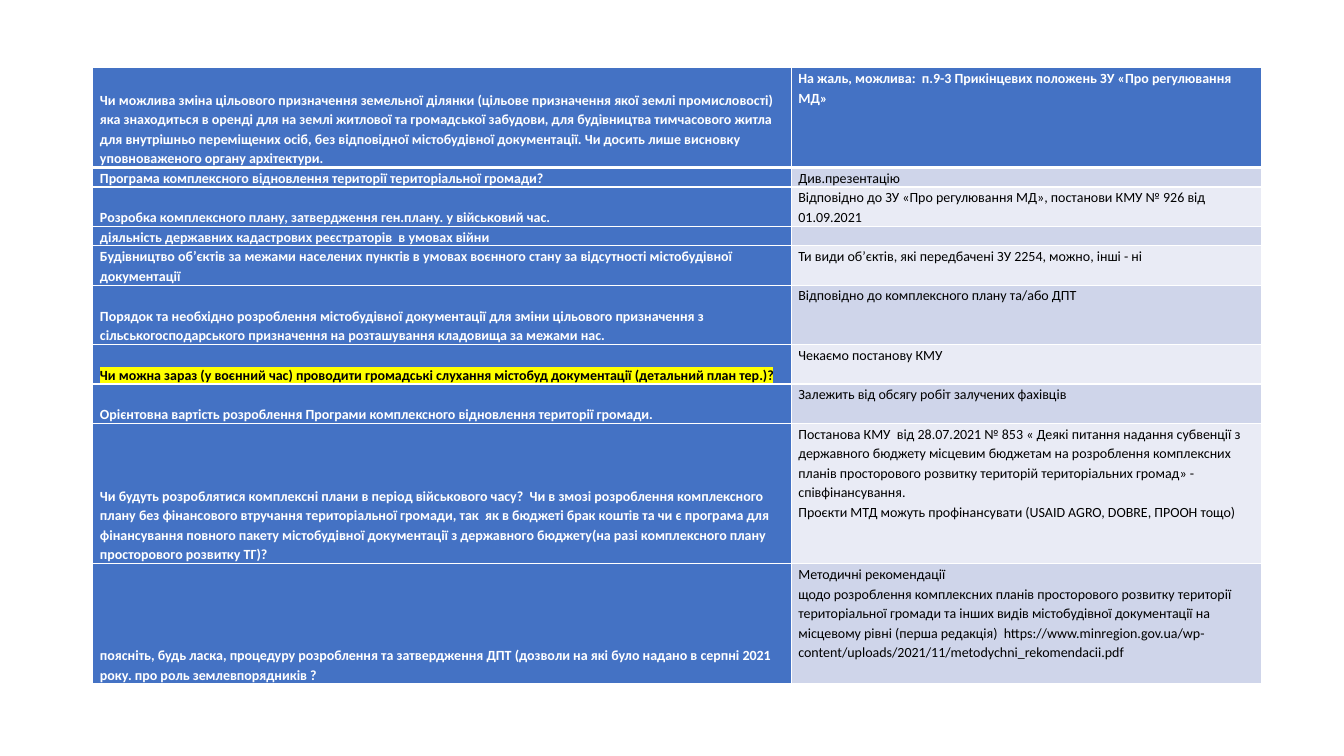
from lxml import etree
from pptx import Presentation
from pptx.dml.color import RGBColor
from pptx.enum.text import MSO_ANCHOR
from pptx.oxml.ns import qn
from pptx.util import Cm, Pt

BOTTOM, TOP = MSO_ANCHOR.BOTTOM, MSO_ANCHOR.TOP
BLUE = RGBColor(0x44, 0x72, 0xC4)
DARK_BAND = RGBColor(0xCF, 0xD5, 0xEA)
LIGHT_BAND = RGBColor(0xE9, 0xEB, 0xF5)
WHITE = RGBColor(0xFF, 0xFF, 0xFF)
BLACK = RGBColor(0, 0, 0)
YELLOW = RGBColor(0xFF, 0xFF, 0)

FONT = "Calibri"
TEXT_SIZE = Pt(10)
COLUMN_WIDTHS = (17.6, 11.86)
HIGHLIGHTED_ROW = 6

# Row height in cm, question, paragraphs of the answer
ROWS = [
    (2.51, "Чи можлива зміна цільового призначення земельної ділянки (цільове призначення якої землі "
     "промисловості) яка знаходиться в оренді для на землі житлової та громадської забудови, для "
     "будівництва тимчасового житла для внутрішньо переміщених осіб, без відповідної містобудівної "
     "документації. Чи досить лише висновку уповноваженого органу архітектури.",
     ["На жаль, можлива:  п.9-3 Прикінцевих положень ЗУ «Про регулювання МД»"]),
    (0.49, "Програма комплексного відновлення території територіальної громади?",
     ["Див.презентацію"]),
    (0.99, "Розробка комплексного плану, затвердження ген.плану. у військовий час.",
     ["Відповідно до ЗУ «Про регулювання МД», постанови КМУ № 926 від 01.09.2021"]),
    (0.49, "діяльність державних кадастрових реєстраторів  в умовах війни", []),
    (0.99, "Будівництво об’єктів за межами населених пунктів в умовах воєнного стану за відсутності "
     "містобудівної документації",
     ["Ти види об’єктів, які передбачені ЗУ 2254, можно, інші - ні"]),
    (1.5, "Порядок та необхідно розроблення містобудівної документації для зміни цільового "
     "призначення з сільськогосподарського призначення на розташування кладовища за межами нас.",
     ["Відповідно до комплексного плану та/або ДПТ"]),
    (0.99, "Чи можна зараз (у воєнний час) проводити громадські слухання містобуд документації "
     "(детальний план тер.)?",
     ["Чекаємо постанову КМУ"]),
    (0.99, "Орієнтовна вартість розроблення Програми комплексного відновлення території громади.",
     ["Залежить від обсягу робіт залучених фахівців"]),
    (3.54, "Чи будуть розроблятися комплексні плани в період військового часу?  Чи в змозі розроблення "
     "комплексного плану без фінансового втручання територіальної громади, так  як в бюджеті брак "
     "коштів та чи є програма для фінансування повного пакету містобудівної документації з "
     "державного бюджету(на разі комплексного плану просторового розвитку ТГ)?",
     ["Постанова КМУ  від 28.07.2021 № 853 « Деякі питання надання субвенції з державного бюджету "
      "місцевим бюджетам на розроблення комплексних планів просторового розвитку територій "
      "територіальних громад» - співфінансування.",
      "Проєкти МТД можуть профінансувати (USAID AGRO, DOBRE, ПРООН тощо)"]),
    (3.03, "поясніть, будь ласка, процедуру розроблення та затвердження ДПТ (дозволи на які було надано "
     "в серпні 2021 року. про роль землевпорядників ?",
     ["Методичні рекомендації\n"
      "щодо розроблення комплексних планів просторового розвитку території територіальної громади "
      "та інших видів містобудівної документації на місцевому рівні (перша редакція)  "
      "https://www.minregion.gov.ua/wp-content/uploads/2021/11/metodychni_rekomendacii.pdf"]),
]


def add_color(parent, tag, color):
    element = etree.SubElement(parent, qn(tag))
    etree.SubElement(element, qn("a:srgbClr"), val=str(color))


def set_borders(cell, row_index):
    """Draw white cell borders, with a thick line under the first row."""
    properties = cell._tc.get_or_add_tcPr()
    widths = {"L": 1, "R": 1, "T": 3 if row_index == 1 else 1, "B": 3 if row_index == 0 else 1}
    for side, width in widths.items():
        line = etree.SubElement(properties, qn(f"a:ln{side}"), w=str(Pt(width)))
        add_color(line, "a:solidFill", WHITE)


def add_run(paragraph, text, color, bold, highlight):
    run = paragraph.add_run()
    run.text = text
    run.font.size = TEXT_SIZE
    run.font.bold = bold
    run.font.color.rgb = color
    if highlight:
        add_color(run.font._element, "a:highlight", highlight)
    run.font.name = FONT


def fill_cell(cell, texts, row_index, fill, anchor, color, bold, highlight=None):
    set_borders(cell, row_index)
    cell.fill.solid()
    cell.fill.fore_color.rgb = fill
    cell.vertical_anchor = anchor
    cell.margin_left = cell.margin_right = Cm(0.18)
    cell.margin_top = cell.margin_bottom = 0
    frame = cell.text_frame
    for index, text in enumerate(texts):
        paragraph = frame.add_paragraph() if index else frame.paragraphs[0]
        paragraph.line_spacing = 1.15
        for line_index, line in enumerate(text.split("\n")):
            if line_index:
                paragraph.add_line_break()
            add_run(paragraph, line, color, bold, highlight)
    if not texts:
        # Keeps the empty row as low as one line of text
        size = str(int(TEXT_SIZE.pt * 100))
        etree.SubElement(frame.paragraphs[0]._p, qn("a:endParaRPr"), sz=size)


def add_question_table(slide):
    heights = [height for height, _, _ in ROWS]
    table = slide.shapes.add_table(
        len(ROWS), len(COLUMN_WIDTHS), Cm(2.34), Cm(1.71), Cm(sum(COLUMN_WIDTHS)), Cm(sum(heights))
    ).table
    for column, width in zip(table.columns, COLUMN_WIDTHS):
        column.width = Cm(width)
    for index, (height, question, answer) in enumerate(ROWS):
        table.rows[index].height = Cm(height)
        marked = index == HIGHLIGHTED_ROW
        fill_cell(table.cell(index, 0), [question], index, BLUE, BOTTOM,
                  BLACK if marked else WHITE, True, YELLOW if marked else None)
        is_header = index == 0
        band = DARK_BAND if index % 2 else LIGHT_BAND
        fill_cell(table.cell(index, 1), answer, index, BLUE if is_header else band, TOP,
                  WHITE if is_header else BLACK, is_header)


def main():
    presentation = Presentation()
    presentation.slide_width = Cm(33.87)
    presentation.slide_height = Cm(19.05)
    slide = presentation.slides.add_slide(presentation.slide_layouts[6])
    add_question_table(slide)
    presentation.save("out.pptx")


if __name__ == "__main__":
    main()
